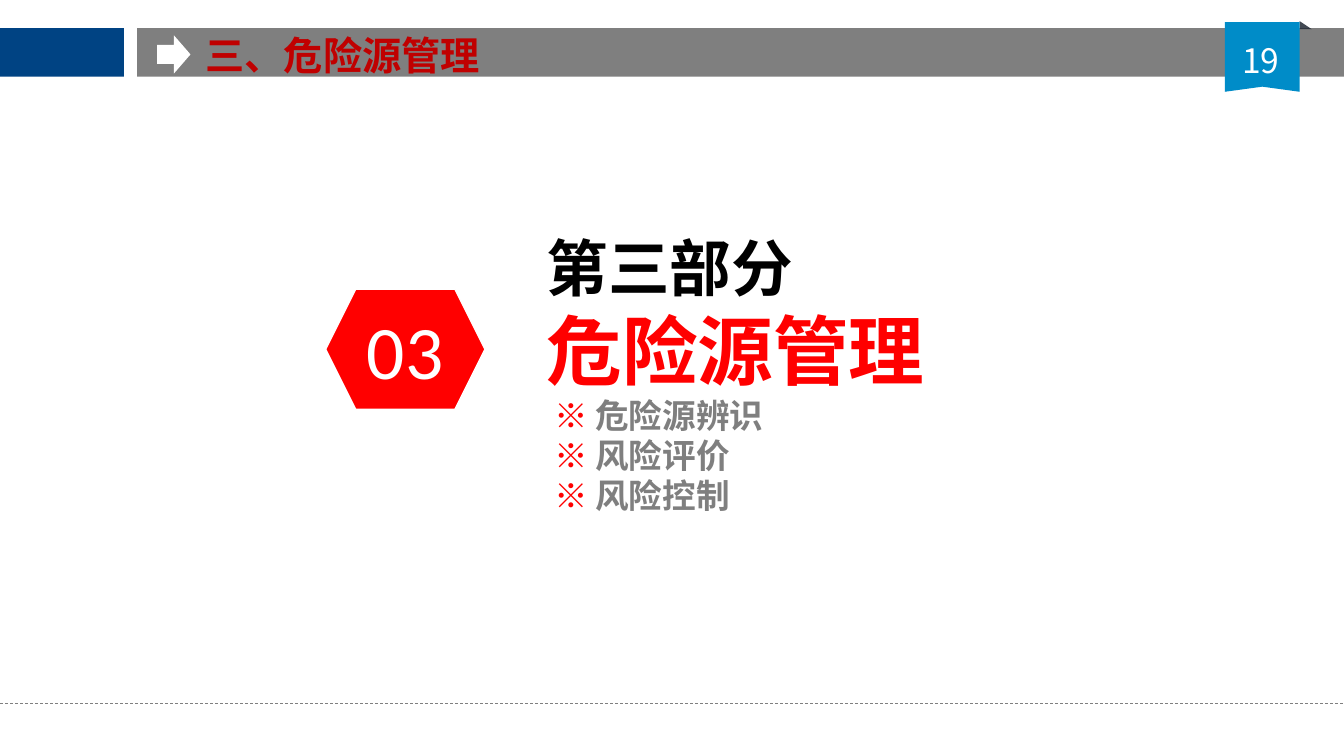
from dataclasses import dataclass

from lxml import etree
from pptx import Presentation
from pptx.dml.color import RGBColor
from pptx.enum.dml import MSO_LINE
from pptx.enum.shapes import MSO_CONNECTOR, MSO_SHAPE
from pptx.enum.text import MSO_ANCHOR, MSO_AUTO_SIZE, PP_ALIGN
from pptx.oxml.ns import qn
from pptx.util import Inches, Pt

RECT, HEX = MSO_SHAPE.RECTANGLE, MSO_SHAPE.HEXAGON
ARROW, FOLD = MSO_SHAPE.RIGHT_ARROW, MSO_SHAPE.RIGHT_TRIANGLE
LEFT, CENTER = PP_ALIGN.LEFT, PP_ALIGN.CENTER
TOP, MIDDLE = MSO_ANCHOR.TOP, MSO_ANCHOR.MIDDLE
STRAIGHT, DASH = MSO_CONNECTOR.STRAIGHT, MSO_LINE.DASH
FIXED = MSO_AUTO_SIZE.NONE


@dataclass(frozen=True)
class Theme:
    """Colours, fonts and type sizes of the deck."""
    white: str = "FFFFFF"
    black: str = "000000"
    gray: str = "7F7F7F"
    navy: str = "004383"
    blue: str = "008CC8"
    dark: str = "222A35"
    red: str = "FF0000"
    crimson: str = "C00000"
    cjk: str = "Noto Sans CJK SC"
    latin: str = "Calibri"
    huge: int = 54
    large: int = 44
    head: int = 28
    base: int = 24
    lead: float = 1.2


THEME = Theme()


def paint(shape, fill, line=None):
    """Give a shape a flat fill and an optional outline."""
    shape.shadow.inherit = False
    shape.fill.solid()
    shape.fill.fore_color.rgb = RGBColor.from_string(fill)
    if line:
        shape.line.color.rgb = RGBColor.from_string(line)
        shape.line.width = Pt(1)
    else:
        shape.line.fill.background()
    return shape


def block(shapes, kind, box, fill, line=None):
    """Add a painted preset shape in a box given in inches."""
    return paint(shapes.add_shape(kind, *map(Inches, box)), fill, line)


def place(shape, box):
    """Move a shape to a box and bring it to the front."""
    shape.left, shape.top, shape.width, shape.height = map(Inches, box)
    tree = shape.element.getparent()
    tree.append(shape.element)


def frame(shape, anchor=TOP, inset=0.08):
    """Prepare the text frame of a shape."""
    text = shape.text_frame
    text.word_wrap = True
    text.auto_size = FIXED
    text.vertical_anchor = anchor
    text.margin_left = text.margin_right = Inches(0.1 if inset else 0)
    text.margin_top = text.margin_bottom = Inches(inset)
    return text


def write(para, runs, size, bold=False, font=THEME.cjk, align=LEFT, hang=0):
    """Write coloured runs into a paragraph."""
    para.alignment = align
    para.space_before = para.space_after = Pt(0)
    para.line_spacing = Pt(size * THEME.lead)
    props = para._p.get_or_add_pPr()
    props.set("marL", str(Inches(hang)))
    props.set("indent", str(-Inches(hang)))
    etree.SubElement(props, qn("a:buNone"))
    for words, color in runs:
        run = para.add_run()
        run.text = words
        run.font.size = Pt(size)
        run.font.bold = bold
        run.font.color.rgb = RGBColor.from_string(color)
        run.font.name = font
        east = etree.SubElement(run._r.get_or_add_rPr(), qn("a:ea"))
        east.set("typeface", font)


def ribbon(slide, box, number):
    """Draw the page ribbon with its fold and number."""
    x, y, w, h = box
    fold = block(slide.shapes, FOLD, (x + w, y - 0.01, 0.12, 0.08), THEME.dark)
    color = fold.fill._xPr.find(qn("a:solidFill"))[0]
    etree.SubElement(color, qn("a:alpha")).set("val", "85000")
    pen = slide.shapes.build_freeform(Inches(x), Inches(y))
    edge = [(x + w, y), (x + w, y + h), (x + w / 2, y + h - 0.05), (x, y + h)]
    pen.add_line_segments([(Inches(a), Inches(b)) for a, b in edge])
    paint(pen.convert_to_shape(), THEME.blue)
    label = slide.shapes.add_textbox(
        *map(Inches, (x - 0.12, y + 0.1, 0.95, 0.4)))
    write(frame(label).paragraphs[0], [(number, THEME.white)],
          THEME.base, align=CENTER)


def header(slide, box, title, number):
    """Draw the top bar with arrow, title and page ribbon."""
    x, y, w, h = box
    gap = x + 1.36
    block(slide.shapes, RECT, (x, y, 1.23, h), THEME.navy)
    block(slide.shapes, RECT, (gap, y, w - 1.36, h), THEME.gray)
    block(slide.shapes, ARROW, (gap + 0.2, y + 0.07, 0.33, 0.38), THEME.white)
    holder = slide.shapes.title
    place(holder, (gap + 0.58, y - 0.05, 10.11, 0.57))
    write(frame(holder).paragraphs[0], [(title, THEME.crimson)],
          THEME.head, True, hang=0.38)
    ribbon(slide, (x + 12.15, y - 0.06, 0.74, 0.69), number)


def badge(slide, box, number):
    """Draw the hexagon badge inside its white rim."""
    x, y, w, h = box
    group = slide.shapes.add_group_shape()
    block(group.shapes, HEX, box, THEME.white, THEME.white)
    core = block(group.shapes, HEX, (x + 0.08, y + 0.07, w - 0.16, h - 0.14),
                 THEME.red, THEME.white)
    write(frame(core, MIDDLE, 0).paragraphs[0], [(number, THEME.white)],
          THEME.huge, font=THEME.latin, align=CENTER)


def section(slide, box, part, name, topics):
    """Fill the body with the part, its name and its topics."""
    body = slide.placeholders[1]
    place(body, box)
    text = frame(body)
    rows = [([(part, THEME.black)], THEME.large),
            ([(name, THEME.red)], THEME.huge)]
    rows += [([(" ※ ", THEME.red), (topic, THEME.gray)], THEME.base)
             for topic in topics]
    for i, (runs, size) in enumerate(rows):
        para = text.add_paragraph() if i else text.paragraphs[0]
        write(para, runs, size, True, hang=0.62)


def footer(slide, box):
    """Draw the dashed rule along the top of the box."""
    x, y, w, _ = box
    rule = slide.shapes.add_connector(
        STRAIGHT, Inches(x), Inches(y), Inches(x + w), Inches(y))
    rule.line.color.rgb = RGBColor.from_string(THEME.gray)
    rule.line.width = Pt(0.5)
    rule.line.dash_style = DASH
    etree.SubElement(rule.element.spPr, qn("a:effectLst"))


def main():
    """Build and save the section slide."""
    deck = Presentation()
    deck.slide_width, deck.slide_height = Inches(13.33), Inches(7.5)
    slide = deck.slides.add_slide(deck.slide_layouts[1])
    header(slide, (0, 0.28, 13.33, 0.48), "三、危险源管理", "19")
    footer(slide, (0, 6.98, 13.33, 0.52))
    badge(slide, (3.15, 2.8, 1.74, 1.33), "03")
    section(slide, (5.32, 2.2, 4.14, 2.96), "第三部分", "危险源管理",
            ["危险源辨识", "风险评价", "风险控制"])
    deck.save("out.pptx")


if __name__ == "__main__":
    main()
